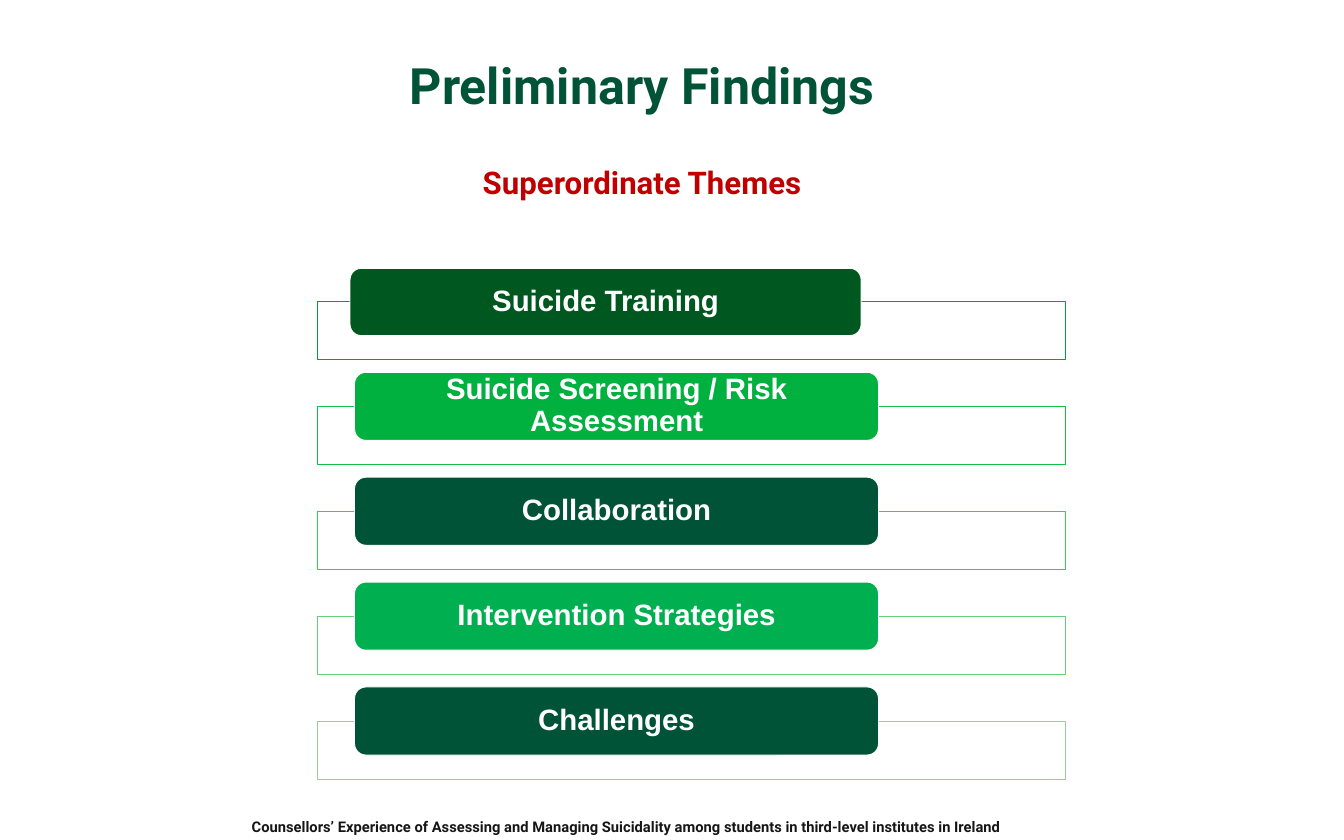
from lxml import etree
from pptx import Presentation
from pptx import util as u
from pptx.dml import color
from pptx.enum import shapes, text
from pptx.oxml import ns

Pt = u.Pt


def rgb(code):
    return color.RGBColor.from_string(code)


def write(para, words, size, face, code):
    para.alignment = text.PP_ALIGN.CENTER
    run = para.add_run()
    run.text = words
    run.font.size = Pt(size)
    run.font.name = face
    run.font.bold = True
    run.font.color.rgb = rgb(code)


deck = Presentation()
deck.slide_width = Pt(1280)
deck.slide_height = Pt(800)
slide = deck.slides.add_slide(deck.slide_layouts[6])

title = slide.shapes.add_textbox(Pt(302.4), Pt(54.7), Pt(618.5), Pt(90)).text_frame
title.word_wrap = True
head = title.paragraphs[0]
head.line_spacing = 0.9
write(head, "Preliminary Findings", 47.7, "Roboto", "005336")
sub = title.add_paragraph()
sub.line_spacing = 0.9
sub.space_before = Pt(50)
write(sub, "Superordinate Themes", 29.7, "Roboto", "C00000")

themes = [
    ("Suicide Training", "005820", "00A13A"),
    ("Suicide Screening / Risk Assessment", "00B140", "11C047"),
    ("Collaboration", "005336", "2BD656"),
    ("Intervention Strategies", "00B050", "64CE79"),
    ("Challenges", "005336", "95CD9D"),
]
step = 99.9
for i, (name, fill, edge) in enumerate(themes):
    frame = slide.shapes.add_shape(
        shapes.MSO_SHAPE.RECTANGLE, Pt(302.4), Pt(287.3 + i * step), Pt(712), Pt(55.4))
    left, top, width, high = (337.7, 254.7 + i * step, 499, 64.8)
    if i == 0:
        left, top, width, high = 333.4, 255.6, 486.7, 64
    bar = slide.shapes.add_shape(
        shapes.MSO_SHAPE.ROUNDED_RECTANGLE, Pt(left), Pt(top), Pt(width), Pt(high))
    for shape, paint, line in ((frame, "FFFFFF", edge), (bar, fill, "FFFFFF")):
        shape.shadow.inherit = False
        shape.fill.solid()
        shape.fill.fore_color.rgb = rgb(paint)
        shape.line.color.rgb = rgb(line)
        shape.line.width = Pt(0.85)
    tint = frame.fill._xPr.find(ns.qn("a:solidFill"))[0]
    etree.SubElement(tint, ns.qn("a:alpha"), val="90000")

    body = bar.text_frame
    body.word_wrap = True
    body.vertical_anchor = text.MSO_ANCHOR.MIDDLE
    body.margin_left = body.margin_right = Pt(21.6)
    body.margin_top = body.margin_bottom = 0
    label = body.paragraphs[0]
    label.line_spacing = 0.9
    write(label, name, 28, "Arial", "FFFFFF")

foot = slide.shapes.add_textbox(Pt(135.4), Pt(775.4), Pt(922.3), Pt(24.5)).text_frame
foot.word_wrap = True
write(foot.paragraphs[0],
      "Counsellors’ Experience of Assessing and Managing Suicidality "
      "among students in third-level institutes in Ireland",
      14, "Roboto", "171616")

deck.save("out.pptx")
